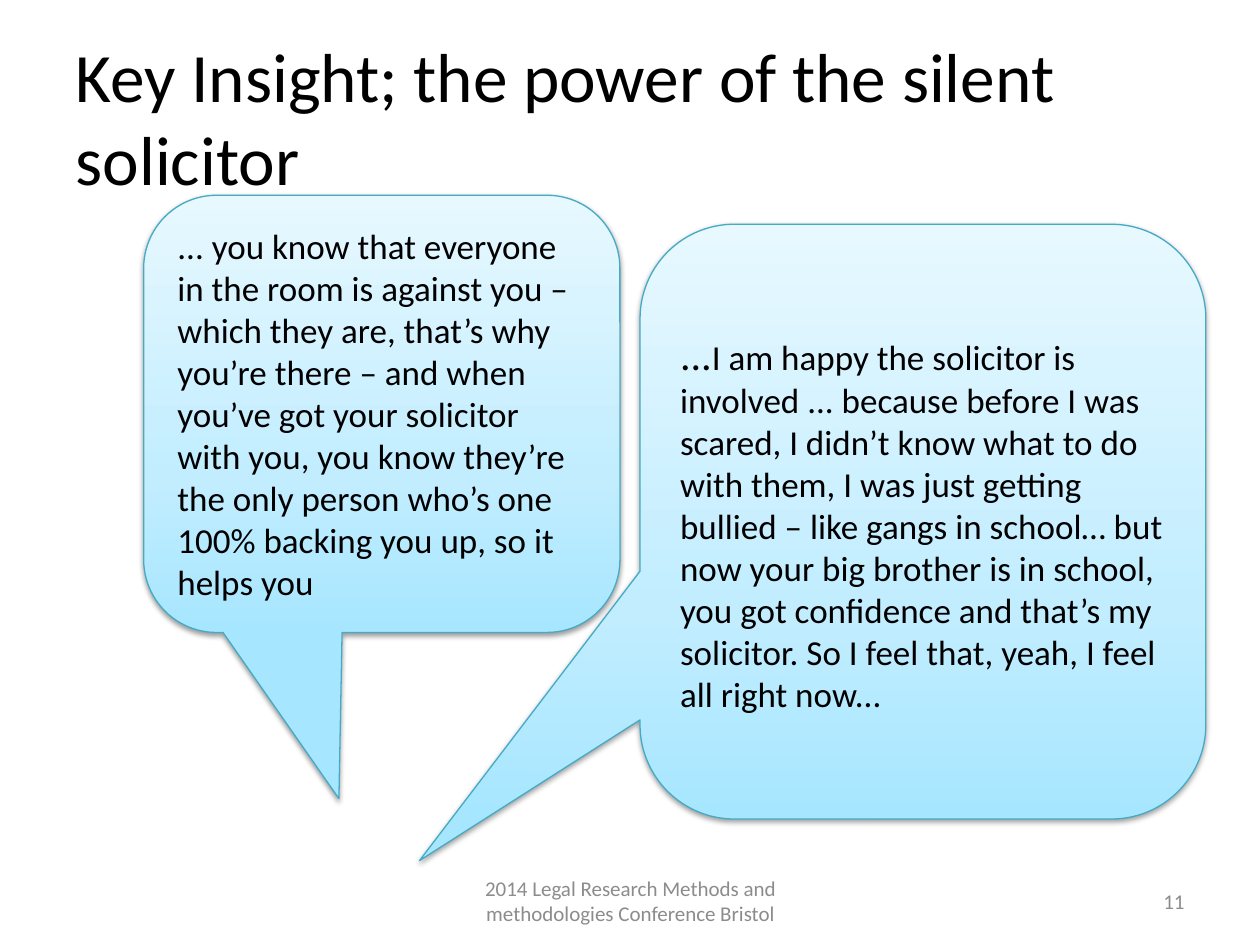
import dataclasses

import pptx
import pptx.dml.color
import pptx.enum.shapes
import pptx.enum.text
import pptx.oxml.ns
import pptx.util
from lxml import etree

Inches = pptx.util.Inches
Pt = pptx.util.Pt
Align = pptx.enum.text.PP_ALIGN
qn = pptx.oxml.ns.qn

FONT = "Calibri"
BLACK = "000000"
GREY = "8C8C8C"
OUTLINE = "46AAC5"
GRADIENT = [(0, "A7E6FF"), (35, "C1EDFF"), (100, "E7F8FF")]


@dataclasses.dataclass
class Callout:
    left: float
    top: float
    width: float
    height: float
    tip: tuple[float, float]
    runs: list[tuple[str, float]]


CALLOUTS = [
    Callout(1.14, 1.55, 3.78, 3.47, (-0.09, 0.88), [
        ("... you know that everyone in the room is against you – which they are, "
         "that’s why you’re there – and when you’ve got your solicitor with you, "
         "you know they’re the only person who’s one 100% backing you up, so it "
         "helps you", 20),
    ]),
    Callout(5.08, 1.78, 4.49, 4.72, (-0.89, 0.57), [
        ("...", 24),
        ("I am happy the solicitor is involved ... because before I was scared, "
         "I didn’t know what to do with them, I was just getting bullied – like "
         "gangs in school… but now your big brother is in school, you got "
         "confidence and that’s my solicitor. So I feel that, yeah, I feel all "
         "right now...", 20),
    ]),
]


def rgb(color: str):
    return pptx.dml.color.RGBColor.from_string(color)


def write(shape, *runs: tuple[str, float], color: str = BLACK, align=Align.LEFT) -> None:
    """Fill a shape with one wrapped, vertically centred paragraph of (text, size) runs."""
    frame = shape.text_frame
    frame.word_wrap = True
    frame.auto_size = pptx.enum.text.MSO_AUTO_SIZE.NONE
    frame.vertical_anchor = pptx.enum.text.MSO_ANCHOR.MIDDLE
    paragraph = frame.paragraphs[0]
    paragraph.alignment = align
    for text, size in runs:
        run = paragraph.add_run()
        run.text = text
        run.font.name = FONT
        run.font.size = Pt(size)
        run.font.color.rgb = rgb(color)


def set_gradient(shape) -> None:
    shape.fill.gradient()
    shape.fill.gradient_angle = 90
    stops = shape._element.spPr.find(".//" + qn("a:gsLst"))
    for stop in list(stops):
        stops.remove(stop)
    for position, color in GRADIENT:
        stop = etree.SubElement(stops, qn("a:gs"), pos=str(position * 1000))
        etree.SubElement(stop, qn("a:srgbClr"), val=color)


def set_shadow(shape) -> None:
    shape.shadow.inherit = False
    effects = shape._element.spPr.find(qn("a:effectLst"))
    shadow = etree.SubElement(
        effects, qn("a:outerShdw"), blurRad=str(Pt(3.1)), dist=str(Pt(1.6)),
        dir="5400000", rotWithShape="0")
    color = etree.SubElement(shadow, qn("a:srgbClr"), val=BLACK)
    etree.SubElement(color, qn("a:alpha"), val="38000")


def draw_callout(slide, callout: Callout) -> None:
    shape = slide.shapes.add_shape(
        pptx.enum.shapes.MSO_SHAPE.ROUNDED_RECTANGULAR_CALLOUT,
        Inches(callout.left), Inches(callout.top),
        Inches(callout.width), Inches(callout.height))
    shape.adjustments[0], shape.adjustments[1] = callout.tip
    set_gradient(shape)
    shape.line.color.rgb = rgb(OUTLINE)
    shape.line.width = Pt(0.75)
    set_shadow(shape)
    write(shape, *callout.runs)


def draw_footer(slide, text: str, left: float, width: float, align) -> None:
    box = slide.shapes.add_textbox(Inches(left), Inches(6.95), Inches(width), Inches(0.4))
    write(box, (text, 12), color=GREY, align=align)


def main() -> None:
    presentation = pptx.Presentation()
    presentation.slide_width = Inches(10)
    presentation.slide_height = Inches(7.5)
    slide = presentation.slides.add_slide(presentation.slide_layouts[5])

    title = slide.shapes.title
    title.left, title.top = Inches(0.5), Inches(0.3)
    title.width, title.height = Inches(9), Inches(1.25)
    write(title, ("Key Insight; the power of the silent solicitor", 39.6))

    draw_footer(slide, "2014 Legal Research Methods and methodologies Conference Bristol",
                3.42, 3.17, Align.CENTER)
    draw_footer(slide, "11", 7.17, 2.33, Align.RIGHT)
    for callout in CALLOUTS:
        draw_callout(slide, callout)

    presentation.save("out.pptx")


if __name__ == "__main__":
    main()
